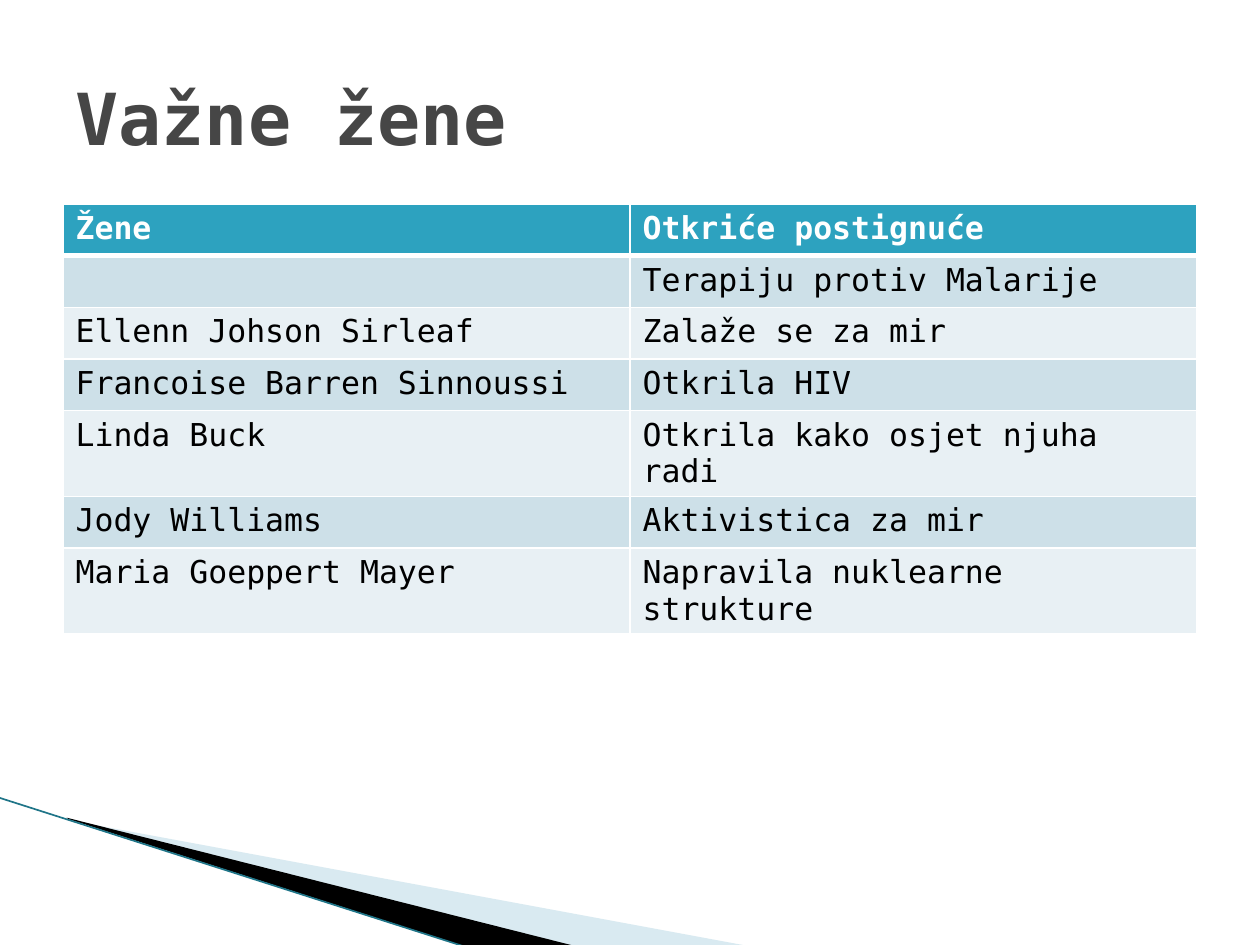
import pptx
import pptx.util
import pptx.dml.color
import pptx.enum.shapes
import pptx.enum.text
import pptx.oxml
import pptx.oxml.ns
from lxml import etree

Inches, Pt = pptx.util.Inches, pptx.util.Pt
qn = pptx.oxml.ns.qn

# Content
TITLE = "Važne žene"
WOMEN = [
    ("Žene", "Otkriće postignuće"),
    ("", "Terapiju protiv Malarije"),
    ("Ellenn Johson Sirleaf", "Zalaže se za mir"),
    ("Francoise Barren Sinnoussi", "Otkrila HIV"),
    ("Linda Buck", "Otkrila kako osjet njuha radi"),
    ("Jody Williams", "Aktivistica za mir"),
    ("Maria Goeppert Mayer", "Napravila nuklearne strukture"),
]
FONT = "DejaVu Sans Mono"
COLORS = {
    "title": "464646", "header": "2DA2BF", "odd": "CDE0E8", "even": "E8F0F4",
    "white": "FFFFFF", "black": "000000", "pale": "A0CBDC", "edge": "1F7588",
}
# Corner wedges: points, colour, opacity in percent
WEDGES = [
    ([(0.55, 6.51), (5.95, 7.51), (4.56, 7.51), (0.55, 6.5)], "pale", 40),
    ([(0.53, 6.49), (4.57, 7.51), (3.72, 7.52), (0.54, 6.5)], "black", 100),
]


def rgb(name):
    return pptx.dml.color.RGBColor.from_string(COLORS[name])


def paint(fill, name):
    fill.solid()
    fill.fore_color.rgb = rgb(name)


def write(frame, text, size, color, bold):
    paragraph = frame.paragraphs[0]
    paragraph.text = text
    font = paragraph.font
    font.name, font.size, font.bold = FONT, Pt(size), bold
    font.color.rgb = rgb(color)


def add_borders(cell, bottom_width):
    properties = cell._tc.get_or_add_tcPr()
    widths = {"lnL": 1, "lnR": 1, "lnT": 1, "lnB": bottom_width}
    for position, (side, width) in enumerate(widths.items()):
        border = etree.Element(qn("a:" + side), w=str(Pt(width)))
        solid = etree.SubElement(border, qn("a:solidFill"))
        etree.SubElement(solid, qn("a:srgbClr"), val=COLORS["white"])
        properties.insert(position, border)


deck = pptx.Presentation()
deck.slide_width, deck.slide_height = Inches(10), Inches(7.5)
slide = deck.slides.add_slide(deck.slide_layouts[6])
paint(slide.background.fill, "white")

# Corner decoration
for points, color, opacity in WEDGES:
    corners = [(Inches(x), Inches(y)) for x, y in points]
    builder = slide.shapes.build_freeform(*corners[0])
    builder.add_line_segments(corners[1:], close=True)
    wedge = builder.convert_to_shape()
    wedge.shadow.inherit = False
    wedge.line.fill.background()
    paint(wedge.fill, color)
    if opacity < 100:
        tint = wedge._element.spPr.find(".//" + qn("a:srgbClr"))
        etree.SubElement(tint, qn("a:alpha"), val=str(opacity * 1000))

edge = slide.shapes.add_connector(
    pptx.enum.shapes.MSO_CONNECTOR.STRAIGHT,
    Inches(-0.01), Inches(6.33), Inches(3.71), Inches(7.52))
edge.line.color.rgb = rgb("edge")
edge.line.width = Pt(0.95)
etree.SubElement(edge._element.spPr, qn("a:effectLst"))

# Table of women and achievements
row_height = 0.41
table = slide.shapes.add_table(
    len(WOMEN), 2, Inches(0.5), Inches(1.62),
    Inches(9), Inches(row_height * len(WOMEN))).table
for r, row in enumerate(WOMEN):
    table.rows[r].height = Inches(row_height)
    header = r == 0
    band = "header" if header else "odd" if r % 2 else "even"
    for c, text in enumerate(row):
        cell = table.cell(r, c)
        paint(cell.fill, band)
        add_borders(cell, 3 if header else 1)
        write(cell.text_frame, text, 18, "white" if header else "black", header)

# Title
heading = slide.shapes.add_textbox(
    Inches(0.5), Inches(0.3), Inches(9), Inches(1.25)).text_frame
heading.word_wrap = True
heading.vertical_anchor = pptx.enum.text.MSO_ANCHOR.MIDDLE
write(heading, TITLE, 41, "title", True)

deck.save("out.pptx")
